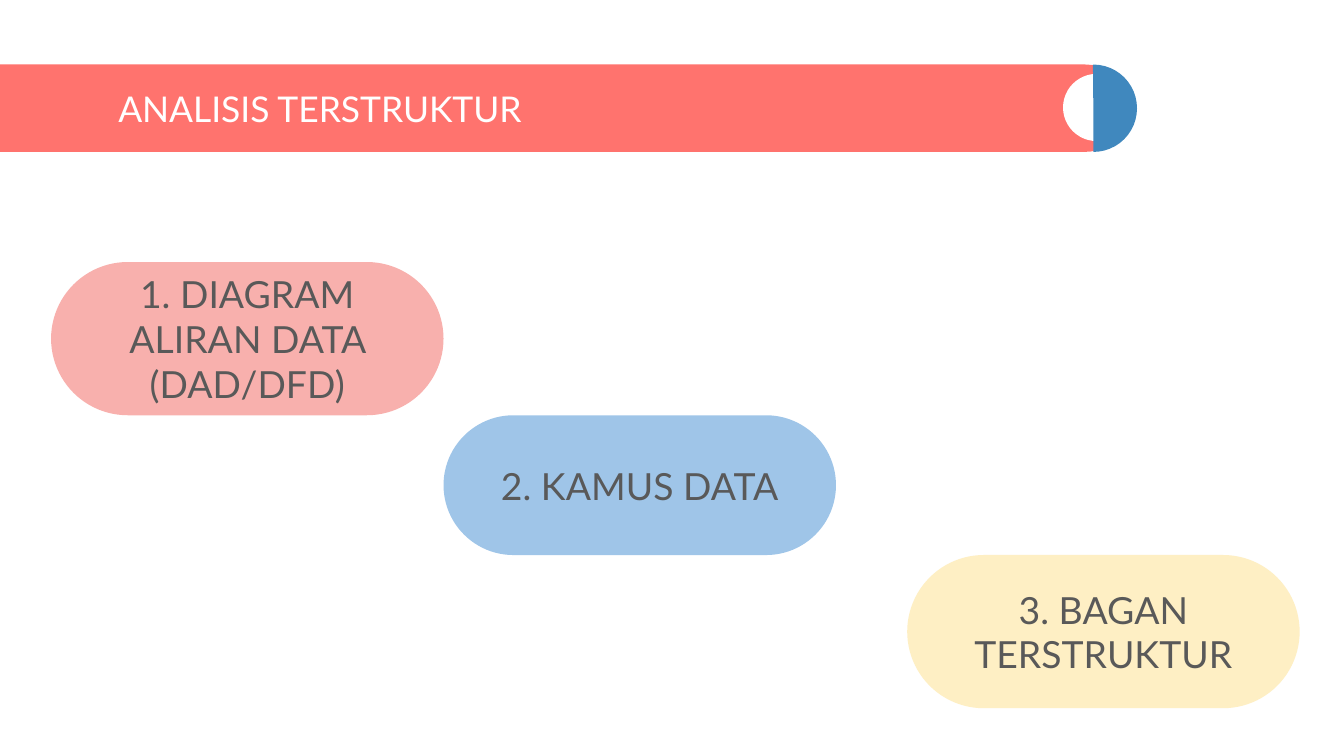
import dataclasses

import pptx
import pptx.dml.color
import pptx.enum.shapes
import pptx.enum.text
import pptx.util

Inches = pptx.util.Inches
Shape = pptx.enum.shapes.MSO_SHAPE
Align = pptx.enum.text.PP_ALIGN


@dataclasses.dataclass(frozen=True)
class Theme:
    font: str = "Lato"
    title_size: float = 19
    topic_size: float = 20
    white: str = "FFFFFF"
    text: str = "595959"
    banner: str = "FF736E"
    half_disc: str = "4088BE"
    pink: str = "F8B0AD"
    blue: str = "9FC5E8"
    yellow: str = "FEEFC4"


@dataclasses.dataclass(frozen=True)
class Topic:
    text: str
    left: float
    height: float
    fill: str


THEME = Theme()
SLIDE_WIDTH = 10
SLIDE_HEIGHT = SLIDE_WIDTH * 9 / 16
TOPIC_WIDTH = 2.92
FIRST_TOPIC_TOP = 1.95
TOPICS = [
    Topic("1. DIAGRAM ALIRAN DATA (DAD/DFD)", 0.38, 1.14, THEME.pink),
    Topic("2. KAMUS DATA", 3.3, 1.04, THEME.blue),
    Topic("3. BAGAN TERSTRUKTUR", 6.75, 1.14, THEME.yellow),
]


def rgb(value: str) -> pptx.dml.color.RGBColor:
    return pptx.dml.color.RGBColor.from_string(value)


def add_plain_shape(slide, kind, left: float, top: float, width: float,
                    height: float, fill: str, adjustments=()):
    shape = slide.shapes.add_shape(
        kind, Inches(left), Inches(top), Inches(width), Inches(height))
    for index, value in enumerate(adjustments):
        shape.adjustments[index] = value
    shape.shadow.inherit = False
    shape.fill.solid()
    shape.fill.fore_color.rgb = rgb(fill)
    shape.line.fill.background()
    return shape


def write_text(shape, text: str, size: float, color: str, alignment) -> None:
    frame = shape.text_frame
    frame.word_wrap = True
    frame.auto_size = pptx.enum.text.MSO_AUTO_SIZE.NONE
    frame.vertical_anchor = pptx.enum.text.MSO_ANCHOR.MIDDLE
    frame.margin_left = frame.margin_right = Inches(0.1)
    frame.margin_top = frame.margin_bottom = Inches(0.1)
    para = frame.paragraphs[0]
    para.text = text
    para.alignment = alignment
    para.font.name = THEME.font
    para.font.size = pptx.util.Pt(size)
    para.font.color.rgb = rgb(color)


def add_banner(slide) -> None:
    add_plain_shape(slide, Shape.ROUNDED_RECTANGLE, -0.32, 0.48, 8.72, 0.65,
                    THEME.banner, [0.5])
    add_plain_shape(slide, Shape.OVAL, 7.91, 0.55, 0.5, 0.5, THEME.white)
    # Pie angles are in units of 5/3 degree: this is the left half, turned right.
    half_disc = add_plain_shape(slide, Shape.PIE, 7.81, 0.48, 0.65, 0.65,
                                THEME.half_disc, [53.67, 162])
    half_disc.rotation = 180


def place_title(slide, text: str) -> None:
    """Format the title placeholder and bring it in front of the banner."""
    title = slide.shapes.title
    title.left, title.top = Inches(0.78), Inches(0.6)
    title.width, title.height = Inches(6.97), Inches(0.41)
    write_text(title, text, THEME.title_size, THEME.white, Align.LEFT)
    title.element.getparent().append(title.element)


def add_topics(slide, topics: list[Topic]) -> None:
    """Draw the topics as steps, each starting where the one above ends."""
    top = FIRST_TOPIC_TOP
    for topic in topics:
        pill = add_plain_shape(slide, Shape.ROUNDED_RECTANGLE, topic.left, top,
                               TOPIC_WIDTH, topic.height, topic.fill, [0.5])
        write_text(pill, topic.text, THEME.topic_size, THEME.text, Align.CENTER)
        top += topic.height


def main() -> None:
    deck = pptx.Presentation()
    deck.slide_width = Inches(SLIDE_WIDTH)
    deck.slide_height = Inches(SLIDE_HEIGHT)
    title_only = deck.slide_layouts.get_by_name("Title Only")
    slide = deck.slides.add_slide(title_only)
    add_banner(slide)
    place_title(slide, "ANALISIS TERSTRUKTUR")
    add_topics(slide, TOPICS)
    deck.save("out.pptx")


if __name__ == "__main__":
    main()
